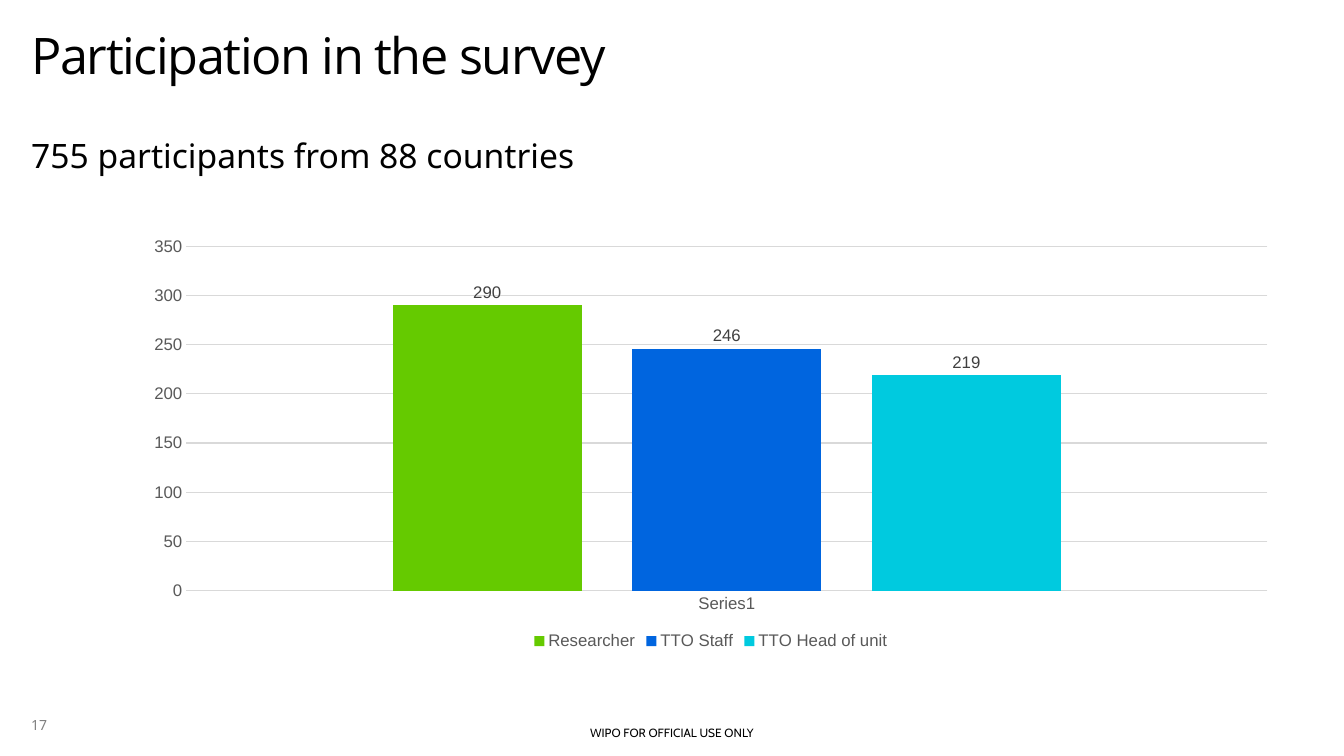
from pptx import Presentation
from pptx.chart.data import CategoryChartData
from pptx.dml.color import RGBColor
from pptx.enum.chart import (XL_CHART_TYPE, XL_LABEL_POSITION,
                             XL_LEGEND_POSITION, XL_TICK_MARK)
from pptx.enum.text import MSO_ANCHOR, MSO_AUTO_SIZE, PP_ALIGN
from pptx.util import Inches, Pt

BLACK = RGBColor(0x00, 0x00, 0x00)
PAGE_GRAY = RGBColor(0x80, 0x80, 0x80)
AXIS_GRAY = RGBColor(0x59, 0x59, 0x59)
LABEL_GRAY = RGBColor(0x40, 0x40, 0x40)
GRID_GRAY = RGBColor(0xD9, 0xD9, 0xD9)
GREEN = RGBColor(0x65, 0xCA, 0x00)
BLUE = RGBColor(0x00, 0x65, 0xDF)
CYAN = RGBColor(0x00, 0xCA, 0xDF)

PARTICIPANTS = [("Researcher", 290, GREEN),
                ("TTO Staff", 246, BLUE),
                ("TTO Head of unit", 219, CYAN)]
MARGIN = 0.31


def set_font(font, size, color, name="Arial"):
    font.size = Pt(size)
    font.name = name
    font.color.rgb = color
    font.bold = False


def put_text(sp, box, text, size, font="Noto Sans", color=BLACK,
             align=PP_ALIGN.LEFT, anchor=MSO_ANCHOR.TOP, spacing=1.0, tracking=0):
    """Place a text shape in box and fill it with one formatted paragraph."""
    sp.left, sp.top, sp.width, sp.height = map(Inches, box)
    tf = sp.text_frame
    tf.word_wrap = True
    tf.auto_size = MSO_AUTO_SIZE.NONE
    tf.vertical_anchor = anchor
    tf.margin_left = tf.margin_right = tf.margin_top = tf.margin_bottom = 0
    p = tf.paragraphs[0]
    p.alignment = align
    p.line_spacing = spacing
    p.space_before = Pt(0)
    r = p.add_run()
    r.text = text
    set_font(r.font, size, color, font)
    if tracking:
        r.font._element.set("spc", str(tracking * 100))
    return p


def add_heading(slide, left, top, width):
    title, body = slide.placeholders
    put_text(title, (left, top, width, 0.8), "Participation in the survey", 36,
             font="Open Sans", spacing=0.9, tracking=-1)
    p = put_text(body, (left, top + 0.83, width, 0.8),
                 "755 participants from 88 countries", 24, spacing=1.5)
    pPr = p._p.get_or_add_pPr()
    pPr.set("marL", "0")
    pPr.set("indent", "0")
    pPr.insert_element_before(pPr.makeelement(
        "{http://schemas.openxmlformats.org/drawingml/2006/main}buNone"),
        "a:tabLst", "a:defRPr", "a:extLst")


def style_axis(axis):
    axis.major_tick_mark = axis.minor_tick_mark = XL_TICK_MARK.NONE
    set_font(axis.tick_labels.font, 12, AXIS_GRAY)


def style_line(line):
    line.color.rgb = GRID_GRAY
    line.width = Pt(0.75)


def add_participant_chart(slide, box):
    data = CategoryChartData()
    data.categories = ["Series1"]
    for name, count, _ in PARTICIPANTS:
        data.add_series(name, [count])
    chart = slide.shapes.add_chart(XL_CHART_TYPE.COLUMN_CLUSTERED,
                                   *map(Inches, box), data).chart
    set_font(chart.font, 10, BLACK, "Calibri")
    chart.has_title = False
    chart.has_legend = True
    chart.legend.position = XL_LEGEND_POSITION.BOTTOM
    chart.legend.include_in_layout = False
    set_font(chart.legend.font, 12, AXIS_GRAY)

    style_axis(chart.category_axis)
    style_line(chart.category_axis.format.line)
    values = chart.value_axis
    style_axis(values)
    values.minimum_scale, values.maximum_scale, values.major_unit = 0, 350, 50
    values.format.line.fill.background()
    style_line(values.major_gridlines.format.line)

    plot = chart.plots[0]
    plot.vary_by_categories = False
    plot.gap_width, plot.overlap = 219, -27
    for series, (_, _, color) in zip(plot.series, PARTICIPANTS):
        series.format.fill.solid()
        series.format.fill.fore_color.rgb = color
        labels = series.data_labels
        labels.show_value = True
        labels.position = XL_LABEL_POSITION.OUTSIDE_END
        set_font(labels.font, 12, LABEL_GRAY)


def add_footer(slide, left, top, width):
    def new_box():
        return slide.shapes.add_textbox(0, 0, 0, 0)

    put_text(new_box(), (left + MARGIN, top, 1.21, 0.4), "17", 10,
             color=PAGE_GRAY, anchor=MSO_ANCHOR.BOTTOM)
    put_text(new_box(), (left, top + 0.27, width, 0.24),
             "WIPO FOR OFFICIAL USE ONLY", 8.5, font="Cabin",
             align=PP_ALIGN.CENTER, anchor=MSO_ANCHOR.MIDDLE)


def main():
    prs = Presentation()
    prs.slide_width, prs.slide_height = Inches(13.33), Inches(7.5)
    slide = prs.slides.add_slide(prs.slide_layouts[1])
    add_heading(slide, MARGIN, 0.31, 11.5)
    add_participant_chart(slide, (1.3, 2.27, 11.5, 4.22))
    add_footer(slide, 0, 6.88, 13.33)
    prs.save("out.pptx")


if __name__ == "__main__":
    main()
